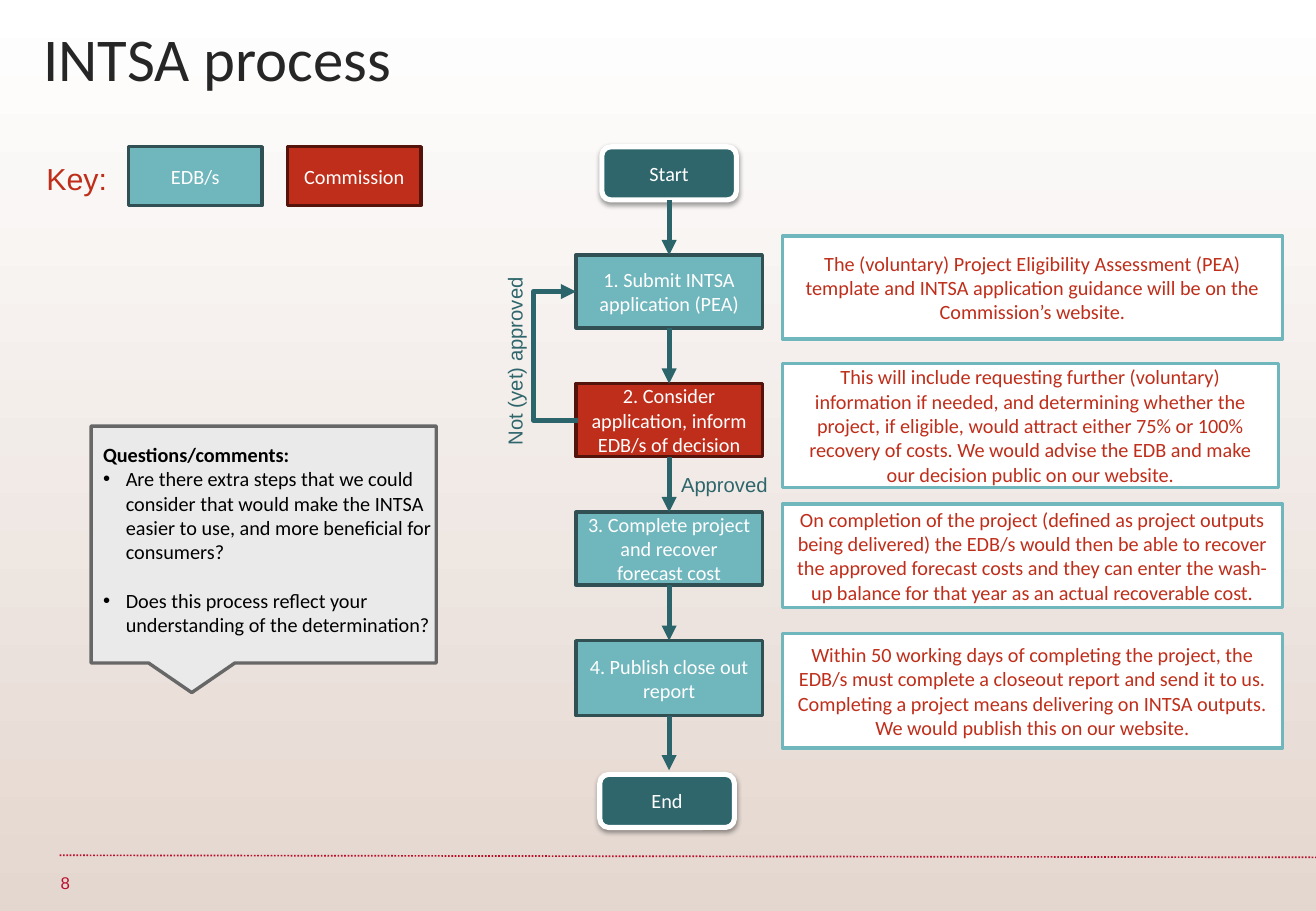
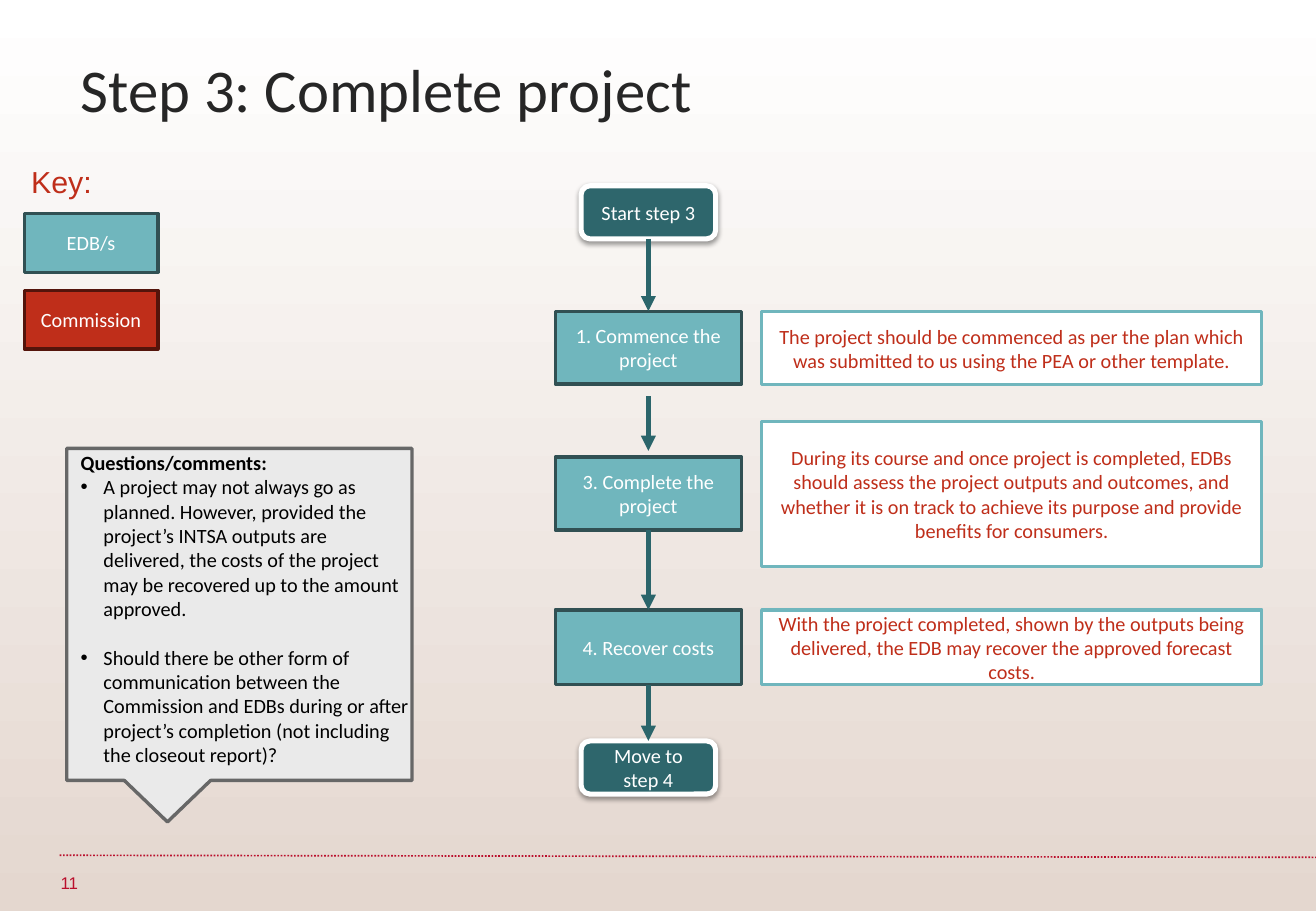
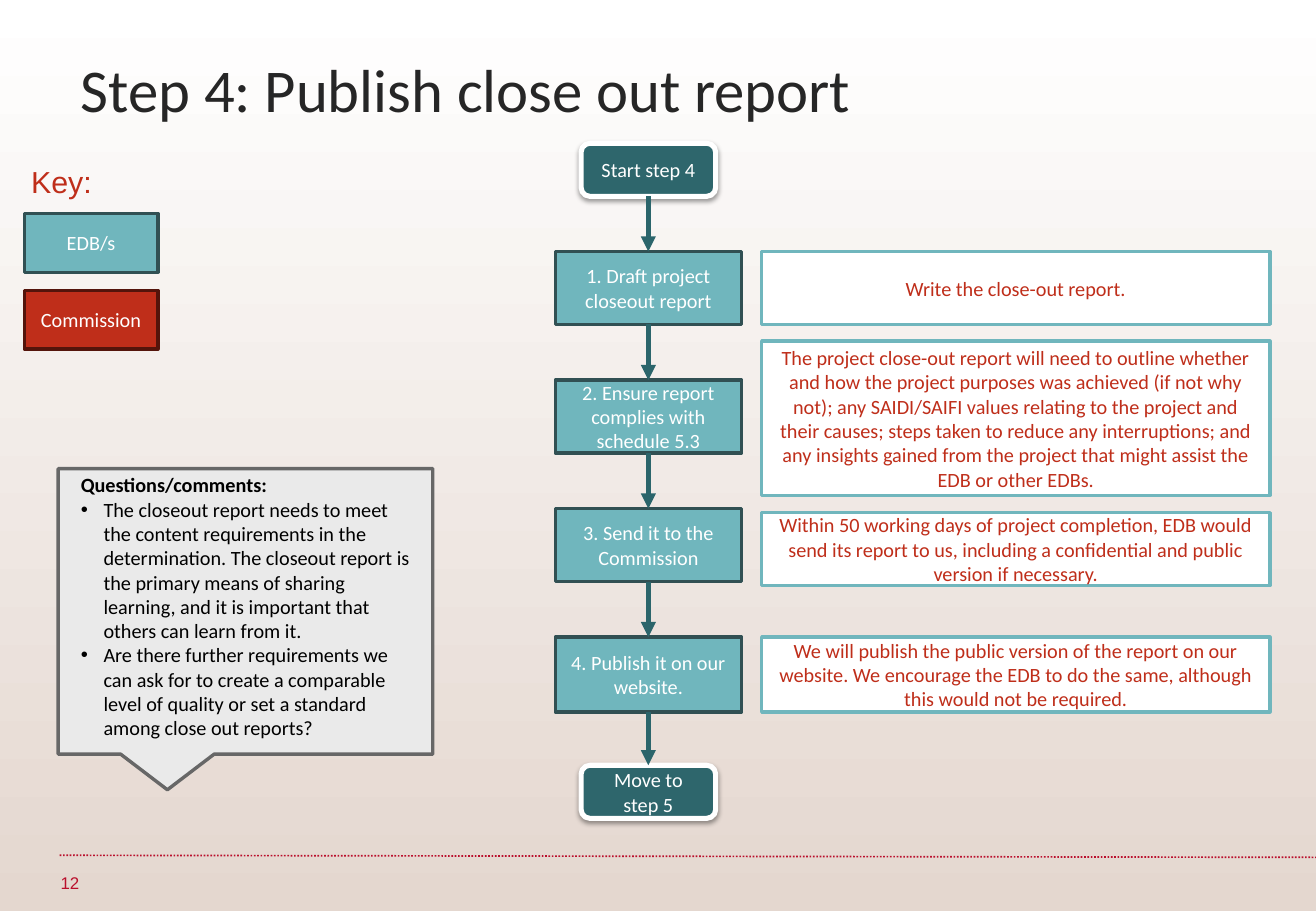
from lxml import etree
from pptx import Presentation
from pptx.dml.color import RGBColor
from pptx.enum.dml import MSO_LINE
from pptx.enum.shapes import MSO_CONNECTOR, MSO_SHAPE
from pptx.enum.text import MSO_ANCHOR, PP_ALIGN
from pptx.oxml.ns import qn
from pptx.util import Inches, Pt

# Enum members
RECT = MSO_SHAPE.RECTANGLE
ROUNDED = MSO_SHAPE.ROUNDED_RECTANGLE
CALLOUT = MSO_SHAPE.RECTANGULAR_CALLOUT
STRAIGHT = MSO_CONNECTOR.STRAIGHT
ELBOW = MSO_CONNECTOR.ELBOW
DOTTED = MSO_LINE.ROUND_DOT
LEFT, CENTER = PP_ALIGN.LEFT, PP_ALIGN.CENTER
TOP, MIDDLE = MSO_ANCHOR.TOP, MSO_ANCHOR.MIDDLE

# Colours
WHITE = RGBColor(0xFF, 0xFF, 0xFF)
BLACK = RGBColor(0x00, 0x00, 0x00)
SAND = RGBColor(0xE4, 0xD7, 0xCF)
INK = RGBColor(0x26, 0x26, 0x26)
CRIMSON = RGBColor(0xBA, 0x0F, 0x2C)
AQUA = RGBColor(0x70, 0xB6, 0xBD)
AQUA_EDGE = RGBColor(0x31, 0x50, 0x53)
RED = RGBColor(0xBF, 0x2E, 0x1A)
RED_EDGE = RGBColor(0x54, 0x14, 0x0B)
TEAL = RGBColor(0x2E, 0x66, 0x6C)
ARROW = RGBColor(0x2B, 0x65, 0x6B)
GREY = RGBColor(0xEA, 0xEA, 0xEA)
GREY_EDGE = RGBColor(0x67, 0x67, 0x67)

EDB = (AQUA, AQUA_EDGE)
COMMISSION = (RED, RED_EDGE)

# Grid of square cells, twelve to the inch
COLUMNS, ROWS = 130, 90
STEP_WIDTH, STEP_HEIGHT, LAST_HEIGHT = 18.4, 7.2, 7.4
END_WIDTH, END_HEIGHT = 13.3, 5.25
KEY_WIDTH, KEY_HEIGHT = 13.2, 5.8
NOTE_OFFSET = 11.2
STEP_PITCH = 12.7


def cells(count):
    return Inches(count / 12)


class FlowDeck:
    """Holds the shared style and the page being drawn."""

    def __init__(self):
        self.deck = Presentation()
        self.deck.slide_width = cells(COLUMNS)
        self.deck.slide_height = cells(ROWS)
        self.page = None
        fill = self.deck.slide_master.background.fill
        fill.gradient()
        fill.gradient_angle = 270
        for stop, colour in zip(fill.gradient_stops, (WHITE, SAND)):
            stop.color.rgb = colour

    # Page frame: title, dotted rule, number
    def new_page(self, title, number, left, top):
        self.page = self.deck.slides.add_slide(self.deck.slide_layouts[6])
        self.line((5.9, 84.5), (COLUMNS, 84.7), CRIMSON, 1).line.dash_style = DOTTED
        heading = self.text((left, top, 90, 13.9), title, 36, INK)
        heading.text_frame.margin_top = cells(1.15)
        heading.text_frame.paragraphs[0].line_spacing = 0.7
        self.text((4.8, 85.1, 5.2, 4.3), number, 10, CRIMSON, "Arial", MIDDLE)

    # Text
    def span(self, paragraph, words, size, colour, font="Calibri", bold=False):
        span = paragraph.add_run()
        span.text = words
        span.font.size = Pt(size)
        span.font.name = font
        span.font.bold = bold
        span.font.color.rgb = colour

    def text(self, place, words, size, colour, font="Calibri", anchor=TOP, bold=False):
        box = self.page.shapes.add_textbox(*map(cells, place))
        box.text_frame.word_wrap = True
        box.text_frame.vertical_anchor = anchor
        self.span(box.text_frame.paragraphs[0], words, size, colour, font, bold)
        return box

    # Shapes
    def shape(self, kind, place, fill, edge, weight=2, words="", colour=WHITE):
        box = self.page.shapes.add_shape(kind, *map(cells, place))
        box.shadow.inherit = False
        box.fill.solid()
        box.fill.fore_color.rgb = fill
        box.line.color.rgb = edge
        box.line.width = Pt(weight)
        if words:
            box.text_frame.word_wrap = True
            box.text_frame.vertical_anchor = MIDDLE
            para = box.text_frame.paragraphs[0]
            para.alignment = CENTER
            self.span(para, words, 12, colour)
        return box

    def terminal(self, center, top, words):
        place = (center - END_WIDTH / 2, top, END_WIDTH, END_HEIGHT)
        box = self.shape(ROUNDED, place, TEAL, WHITE, 3, words)
        effects = box._element.spPr.find(qn("a:effectLst"))
        shadow = etree.SubElement(effects, qn("a:outerShdw"), blurRad=str(Pt(3.1)),
                                  dist=str(Pt(1.6)), dir="5400000", rotWithShape="0")
        black = etree.SubElement(shadow, qn("a:srgbClr"), val="000000")
        etree.SubElement(black, qn("a:alpha"), val="38000")

    def key(self, label, *boxes):
        for (left, top), role, words in zip(boxes, (EDB, COMMISSION),
                                            ("EDB/s", "Commission")):
            self.shape(RECT, (left, top, KEY_WIDTH, KEY_HEIGHT), *role, words=words)
        self.text((*label, 13.2, 4.8), "Key:", 18, RED, "Arial")

    # Lines and arrows
    def line(self, start, end, colour, weight, kind=STRAIGHT, head=False):
        link = self.page.shapes.add_connector(kind, *map(cells, (*start, *end)))
        link.line.color.rgb = colour
        link.line.width = Pt(weight)
        if head:
            etree.SubElement(link.line._get_or_add_ln(), qn("a:tailEnd"), type="triangle")
        etree.SubElement(link._element.spPr, qn("a:effectLst"))
        return link

    def loop_back(self, lower, upper, detour):
        """Elbow arrow from the left side of one step up to an earlier one."""
        link = self.line((0, 0), (1, 1), ARROW, 3, ELBOW, head=True)
        link.begin_connect(lower, 1)
        link.end_connect(upper, 1)
        width = 0.17
        link.width = cells(width)
        frame = link._element.spPr.xfrm
        frame.flipH = frame.flipV = False
        frame.rot = 180
        guides = link._element.spPr.find(qn("a:prstGeom")).get_or_add_avLst()
        etree.SubElement(guides, qn("a:gd"), name="adj1",
                         fmla=f"val {round(detour / width * 100000)}")

    # Flow chart: start, steps, end and the arrows between them
    def flow(self, center, start, steps, end, shift=0, gaps=None):
        self.terminal(center, start[0], start[1])
        bottom = start[0] + END_HEIGHT
        spans, boxes = [], []
        for index, (top, role, words) in enumerate(steps):
            height = LAST_HEIGHT if index == len(steps) - 1 else STEP_HEIGHT
            place = (center - STEP_WIDTH / 2, top, STEP_WIDTH, height)
            boxes.append(self.shape(RECT, place, *role, words=words))
            spans.append((bottom, top))
            bottom = top + height
        self.terminal(center + shift, end[0], end[1])
        spans.append((bottom, end[0]))
        for index, (above, below) in enumerate(spans):
            before, after = (gaps or {}).get(index, (0, 0))
            self.line((center, above + before), (center, below - after),
                      ARROW, 3, head=True)
        return boxes

    def notes(self, center, notes):
        for top, width, height, words in notes:
            self.shape(RECT, (center + NOTE_OFFSET, top, width, height),
                       WHITE, AQUA, 2, words, RED)

    # Speech callout with its questions
    def questions(self, callout, place, questions, gap):
        self.shape(CALLOUT, callout, GREY, GREY_EDGE)
        box = self.text(place, "Questions/comments:", 12, BLACK, bold=True)
        for index, words in enumerate(questions):
            para = box.text_frame.add_paragraph()
            settings = para._p.get_or_add_pPr()
            settings.set("marL", str(cells(2.25)))
            settings.set("indent", str(-cells(2.25)))
            etree.SubElement(settings, qn("a:buFont"), typeface="Arial")
            etree.SubElement(settings, qn("a:buChar"), char="•")
            para.alignment = LEFT
            if index:
                para.space_before = Pt(gap)
            self.span(para, words, 12, BLACK)


def even_steps(first, *steps):
    return [(first + STEP_PITCH * index, *step) for index, step in enumerate(steps)]


def process_page(deck):
    center = 66.1
    deck.new_page("INTSA process", "8", 3.1, 2.9)
    deck.key((3.4, 15.2), (12.7, 14.5), (28.4, 14.5))
    steps = even_steps(
        25.2,
        (EDB, "1. Submit INTSA application (PEA)"),
        (COMMISSION, "2. Consider application, inform EDB/s of decision"),
        (EDB, "3. Complete project and recover forecast cost"),
        (EDB, "4. Publish close out report"))
    boxes = deck.flow(center, (14.5, "Start"), steps, (76.5, "End"),
                      shift=-0.2, gaps={4: (0, 0.4)})
    deck.notes(center, [
        (23.3, 49.4, 10.2, "The (voluntary) Project Eligibility Assessment (PEA) template and "
         "INTSA application guidance will be on the Commission’s website."),
        (35.9, 49, 12.25, "This will include requesting further (voluntary) information if "
         "needed, and determining whether the project, if eligible, would attract either 75% "
         "or 100% recovery of costs. We would advise the EDB and make our decision public on "
         "our website."),
        (49.8, 49.4, 10.2, "On completion of the project (defined as project outputs being "
         "delivered) the EDB/s would then be able to recover the approved forecast costs and "
         "they can enter the wash-up balance for that year as an actual recoverable cost."),
        (62.6, 49.4, 11.3, "Within 50 working days of completing the project, the EDB/s must "
         "complete a closeout report and send it to us. Completing a project means delivering "
         "on INTSA outputs. We would publish this on our website.")])
    deck.loop_back(boxes[1], boxes[0], 4.4)
    deck.text((66.1, 46.1, 13, 3.6), "Approved", 12, TEAL, "Arial")
    deck.text((40.9, 33.4, 19.9, 3.6), "Not (yet) approved", 12, TEAL, "Arial").rotation = 270
    deck.questions((9, 42.1, 34.1, 23.4), (9, 43.1, 35, 20.6), [
        "Are there extra steps that we could consider that would make the INTSA easier to use, "
        "and more beneficial for consumers?",
        "Does this process reflect your understanding of the determination?"], 14.6)


def complete_page(deck):
    center = 64.05
    deck.new_page("Step 3: Complete project", "11", 6.8, 5.9)
    deck.flow(center, (18.35, "Start step 3"), [
        (30.75, EDB, "1. Commence the project"),
        (45.15, EDB, "3. Complete the project"),
        (60.25, EDB, "4. Recover costs")], (73.2, "Move to step 4"), gaps={1: (1.2, 0.6)})
    deck.notes(center, [
        (30.8, 49.4, 7.2, "The project should be commenced as per the plan which was submitted "
         "to us using the PEA or other template."),
        (41.65, 49.4, 14.3, "During its course and once project is completed, EDBs should "
         "assess the project outputs and outcomes, and whether it is on track to achieve its "
         "purpose and provide benefits for consumers."),
        (60.25, 49.4, 7.4, "With the project completed, shown by the outputs being delivered, "
         "the EDB may recover the approved forecast costs.")])
    deck.key((1.9, 15.5), (2.4, 21.1), (2.4, 28.7))
    deck.questions((6.6, 44.3, 34.1, 32.8), (6.8, 43.9, 35, 32.8), [
        "A project may not always go as planned. However, provided the project’s INTSA outputs "
        "are delivered, the costs of the project may be recovered up to the amount approved.",
        "Should there be other form of communication between the Commission and EDBs during or "
        "after project’s completion (not including the closeout report)?"], 14.6)


def report_page(deck):
    center = 64.05
    deck.new_page("Step 4: Publish close out report", "12", 6.8, 5.9)
    steps = even_steps(
        24.85,
        (EDB, "1. Draft project closeout report"),
        (EDB, "2. Ensure report complies with schedule 5.3"),
        (EDB, "3. Send it to the Commission"),
        (EDB, "4. Publish it on our website."))
    deck.flow(center, (14.15, "Start step 4"), steps, (75.6, "Move to step 5"))
    deck.notes(center, [
        (24.85, 50.2, 7.2, "Write the close-out report."),
        (33.7, 50.2, 15.25, "The project close-out report will need to outline whether and how "
         "the project purposes was achieved (if not why not); any SAIDI/SAIFI values relating "
         "to the project and their causes; steps taken to reduce any interruptions; and any "
         "insights gained from the project that might assist the EDB or other EDBs."),
        (50.65, 50.2, 7.2, "Within 50 working days of project completion, EDB would send its "
         "report to us, including a confidential and public version if necessary."),
        (62.95, 50.2, 7.4, "We will publish the public version of the report on our website. "
         "We encourage the EDB to do the same, although this would not be required.")])
    deck.key((1.9, 15.5), (2.4, 21.1), (2.4, 28.7))
    deck.questions((5.75, 46.3, 37, 28.2), (6.8, 46.1, 35.9, 32.8), [
        "The closeout report needs to meet the content requirements in the determination. The "
        "closeout report is the primary means of sharing learning, and it is important that "
        "others can learn from it.",
        "Are there further requirements we can ask for to create a comparable level of quality "
        "or set a standard among close out reports?"], 0)


def main():
    deck = FlowDeck()
    process_page(deck)
    complete_page(deck)
    report_page(deck)
    deck.deck.save("out.pptx")


if __name__ == "__main__":
    main()
